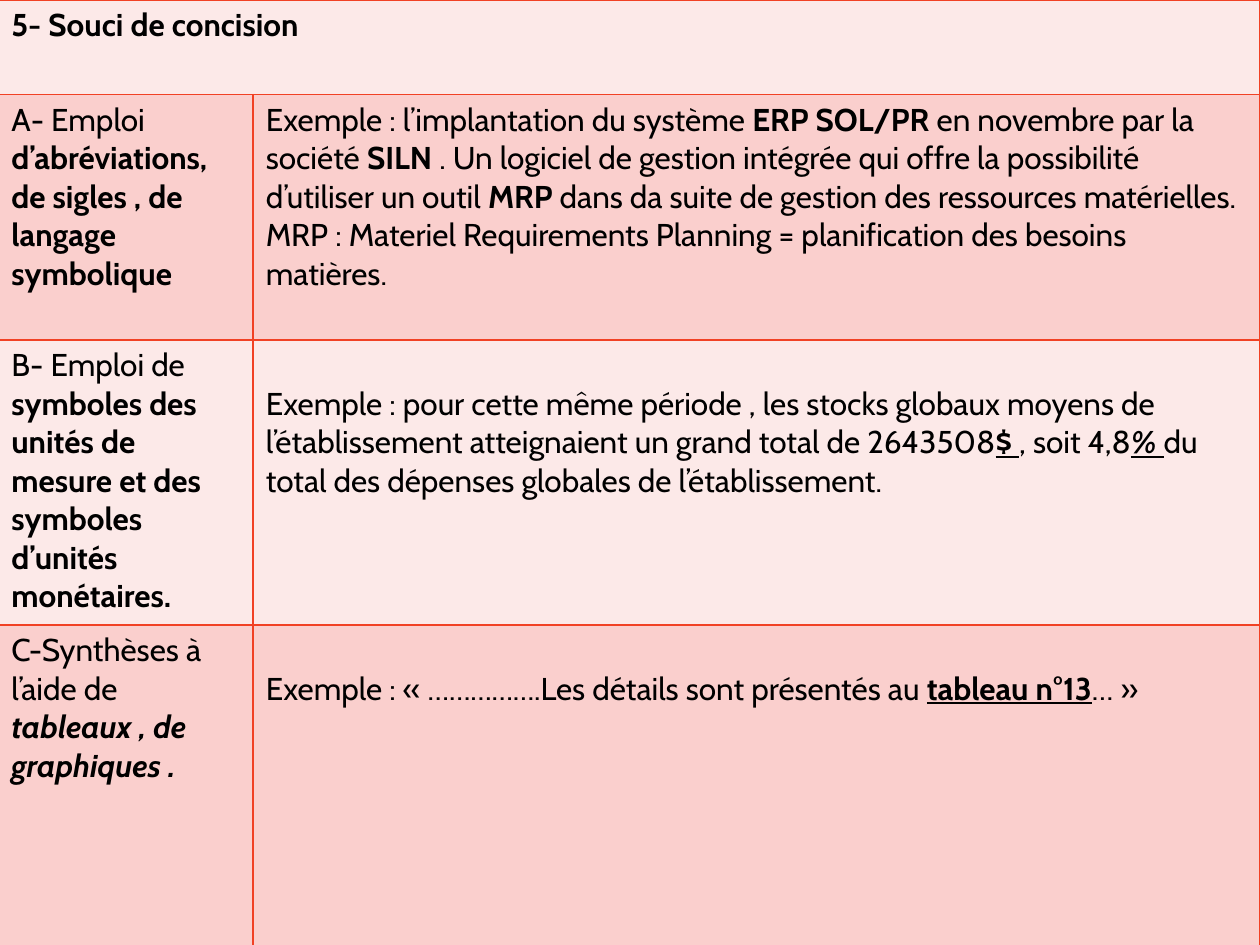
from lxml import etree
from pptx import Presentation
from pptx import util as u
from pptx.dml.color import RGBColor
from pptx.enum import shapes
from pptx.oxml.ns import qn

FONT, SIZE = "Cabin", 18
INK, BORDER = "000000", "F14124"
WHITE, SKY = "FFFFFF", "B4DCFA"
BANDS = ["FCE9E8", "FACFCD"]
COLUMNS = [2.02, 7.99]
ROWS = [0.75, 1.95, 2.26, 2.97]
MARGIN, LINE_HEIGHT = 0.05, 0.305
HORIZON = 5.58
CENTER = [50, 50, 50, 50]


def color(value):
    return RGBColor.from_string(value)


def apply_gradient(properties, stops, focus):
    gradient = etree.Element(qn("a:gradFill"), rotWithShape="1")
    stop_list = etree.SubElement(gradient, qn("a:gsLst"))
    for position, value, opacity in stops:
        stop = etree.SubElement(stop_list, qn("a:gs"), pos=str(position * 1000))
        tint = etree.SubElement(stop, qn("a:srgbClr"), val=value)
        if opacity < 100:
            etree.SubElement(tint, qn("a:alpha"), val=str(opacity * 1000))
    if focus:
        circle = etree.SubElement(gradient, qn("a:path"))
        circle.set("path", "circle")
        edges = {side: str(share * 1000) for side, share in zip("ltrb", focus)}
        etree.SubElement(circle, qn("a:fillToRect"), edges)
    else:
        etree.SubElement(gradient, qn("a:lin"), ang=str(90 * 60000), scaled="0")
    properties.replace(properties.find(qn("a:solidFill")), gradient)


heading = [[("5- Souci de concision", "b")]]
abbreviations = [[("A- Emploi ", ""), ("d’abréviations, de sigles , de langage symbolique", "b")]]
abbreviations_example = [
    [
        ("Exemple : l’implantation du système ", ""),
        ("ERP SOL/PR ", "b"),
        ("en novembre par la société ", ""),
        ("SILN", "b"),
        (" . Un logiciel de gestion intégrée qui offre la possibilité d’utiliser un outil ", ""),
        ("MRP", "b"),
        (" dans da suite de gestion des ressources matérielles.", ""),
    ],
    [("MRP : Materiel Requirements Planning = planification des besoins matières.", "")],
]
symbols = [[
    ("B- Emploi de ", ""),
    ("symboles des unités de mesure et des symboles d’unités monétaires.", "b"),
]]
symbols_example = [[
    ("Exemple : pour cette même période , les stocks globaux moyens de l’établissement "
     "atteignaient un grand total de 2643508", ""),
    ("$ ", "bu"),
    (", soit 4,8", ""),
    ("% ", "biu"),
    ("du total des dépenses globales de l’établissement.", ""),
]]
summaries = [[("C-Synthèses à l’aide de ", ""), ("tableaux , de graphiques .", "bi")]]
summaries_example = [[
    ("Exemple : « …………….Les détails sont présentés au ", ""),
    ("tableau n°13", "bu"),
    ("… »", ""),
]]
contents = [
    [heading, []],
    [abbreviations, abbreviations_example],
    [symbols, symbols_example],
    [summaries, summaries_example],
]
lowered_cells = [(2, 1), (3, 1)]

RECTANGLE, OVAL = shapes.MSO_SHAPE.RECTANGLE, shapes.MSO_SHAPE.OVAL
backdrop = [
    (RECTANGLE, HORIZON, 7.5 - HORIZON, CENTER,
     [(0, WHITE, 91), (37, WHITE, 76), (100, SKY, 79)]),
    (RECTANGLE, 0, HORIZON, CENTER,
     [(0, WHITE, 89), (48, WHITE, 62), (100, SKY, 79)]),
    (RECTANGLE, 4.12, 2.5, None,
     [(0, WHITE, 0), (29, WHITE, 30), (45, SKY, 40),
      (55, WHITE, 26), (65, SKY, 60), (100, WHITE, 0)]),
    (OVAL, 1.75, HORIZON, CENTER, [(0, WHITE, 100), (56, WHITE, 0)]),
]

presentation = Presentation()
presentation.slide_width = u.Inches(10)
presentation.slide_height = u.Inches(7.5)
slide = presentation.slides.add_slide(presentation.slide_layouts[6])

slide.background.fill.solid()
slide.background.fill.fore_color.rgb = color(WHITE)
background = slide._element.find(".//" + qn("p:bgPr"))
apply_gradient(background, [(0, "9ED5FF", 100), (60, WHITE, 100), (100, "5BB9FF", 100)],
               [20, 10, 20, 60])

for kind, top, height, focus, stops in backdrop:
    shape = slide.shapes.add_shape(
        kind, 0, u.Inches(top), presentation.slide_width, u.Inches(height)
    )
    shape.shadow.inherit = False
    shape.line.fill.background()
    shape.fill.solid()
    apply_gradient(shape._element.spPr, stops, focus)

table = slide.shapes.add_table(
    len(ROWS), len(COLUMNS), u.Inches(-0.01), 0, u.Inches(sum(COLUMNS)), u.Inches(sum(ROWS))
).table
for column, width in zip(table.columns, COLUMNS):
    column.width = u.Inches(width)
for row, height in zip(table.rows, ROWS):
    row.height = u.Inches(height)
table.cell(0, 0).merge(table.cell(0, 1))

for row_index, row_contents in enumerate(contents):
    for column_index, paragraphs in enumerate(row_contents):
        cell = table.cell(row_index, column_index)
        cell.fill.solid()
        cell.fill.fore_color.rgb = color(BANDS[row_index % 2])
        for position, side in enumerate(["a:lnL", "a:lnR", "a:lnT", "a:lnB"]):
            line = etree.Element(qn(side), w=str(u.Pt(1)))
            line_fill = etree.SubElement(line, qn("a:solidFill"))
            etree.SubElement(line_fill, qn("a:srgbClr"), val=BORDER)
            cell._tc.get_or_add_tcPr().insert(position, line)
        lowered = (row_index, column_index) in lowered_cells
        cell.margin_top = u.Inches(MARGIN + LINE_HEIGHT * lowered)
        for index, runs in enumerate(paragraphs):
            frame = cell.text_frame
            paragraph = frame.add_paragraph() if index else frame.paragraphs[0]
            for text, style in runs:
                run = paragraph.add_run()
                run.text = text
                run.font.name = FONT
                run.font.size = u.Pt(SIZE)
                run.font.color.rgb = color(INK)
                run.font.bold = "b" in style
                run.font.italic = "i" in style
                run.font.underline = "u" in style

presentation.save("out.pptx")
